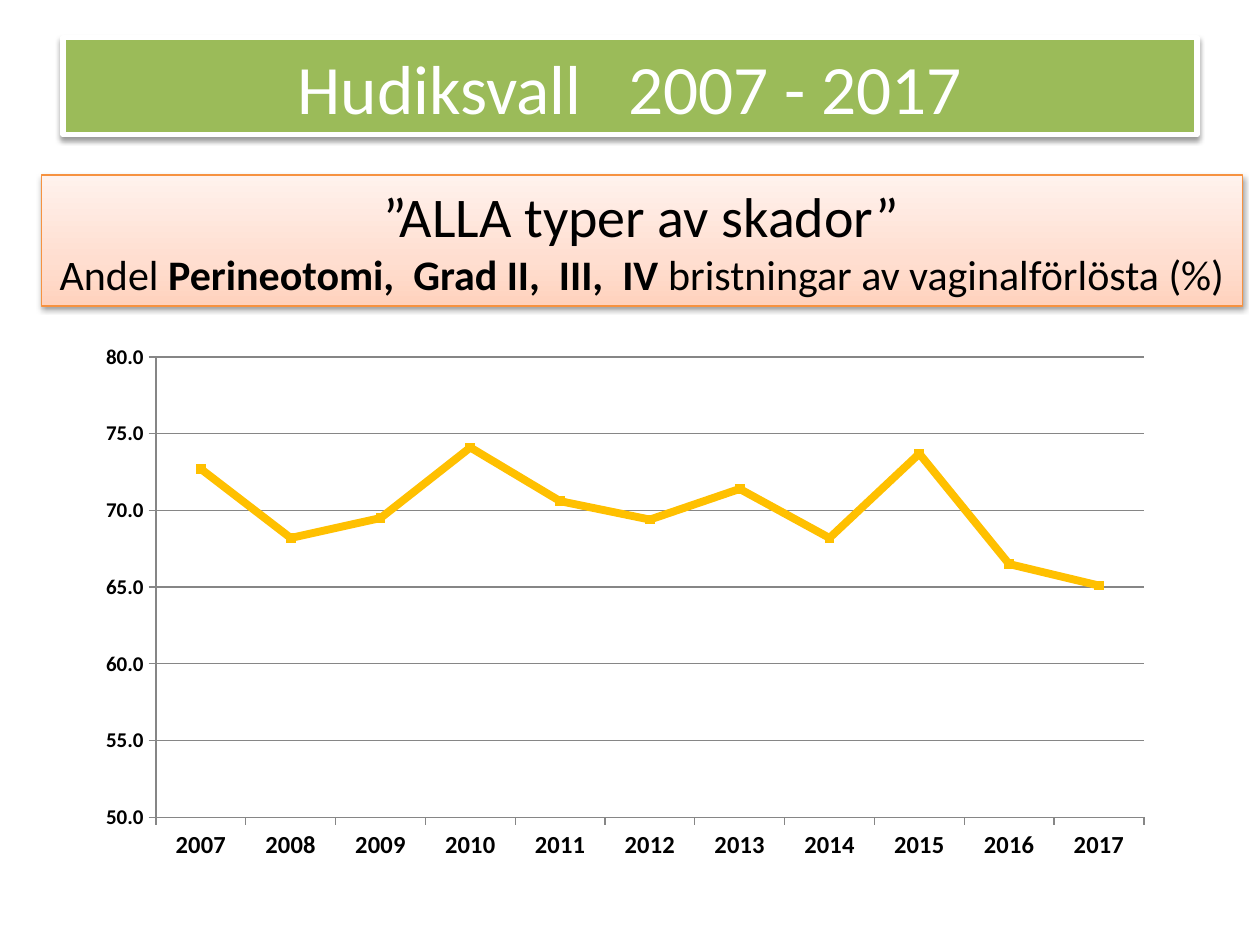
"""Build the slide on birth injuries in Hudiksvall, 2007 to 2017."""
from dataclasses import dataclass

from lxml import etree
from pptx import Presentation
from pptx import util as u
from pptx.chart.data import CategoryChartData
from pptx.dml.color import RGBColor
from pptx.enum import chart as ch, shapes, text
from pptx.oxml.ns import qn

WIDE, HIGH = u.Inches(10), u.Inches(7.5)
FACE = "Calibri"
HUES = {"green": "9BBB59", "white": "FFFFFF", "black": "000000",
        "edge": "F69240", "gold": "FFC000", "gray": "868686"}
BLEND = {0: "FFD2BD", 35: "FFDED0", 100: "FFF2ED"}
YEARS = range(2007, 2018)
RATES = (72.7, 68.2, 69.5, 74.1, 70.6, 69.4, 71.4, 68.2, 73.7, 66.5, 65.1)
LINES = [
    (32, [("”ALLA typer av skador”", False)]),
    (24, [("Andel ", False), ("Perineotomi,  Grad II,  III,  IV ", True),
          ("bristningar av vaginalförlösta (%)", False)]),
]


@dataclass
class Box:
    """Hold a frame as shares of the slide's size."""
    left: float
    top: float
    width: float
    height: float

    def frame(self) -> tuple:
        """Return the frame as lengths."""
        return (int(self.left * WIDE), int(self.top * HIGH),
                int(self.width * WIDE), int(self.height * HIGH))


TITLE = Box(0.05, 0.04, 0.9, 0.1027)
NOTE = Box(0.033, 0.1853, 0.953, 0.1387)
GRAPH = Box(0.067, 0.3533, 0.858, 0.568)


def tint(name: str) -> RGBColor:
    """Return a named colour."""
    return RGBColor.from_string(HUES[name])


def style(font, size: float, hue: str, bold=None) -> None:
    """Set face, size, colour and weight of a font."""
    font.name, font.size, font.bold = FACE, u.Pt(size), bold
    font.color.rgb = tint(hue)


def edge(line, hue: str, width: float) -> None:
    """Set colour and width of a line."""
    line.color.rgb = tint(hue)
    line.width = u.Pt(width)


def shade(shape) -> None:
    """Give a shape a soft shadow straight below it."""
    shape.shadow.inherit = False
    list_ = shape.element.spPr.find(qn("a:effectLst"))
    drop = etree.SubElement(list_, qn("a:outerShdw"), blurRad=str(u.Pt(3.1)),
                            dist=str(u.Pt(1.6)), dir="5400000", rotWithShape="0")
    tone = etree.SubElement(drop, qn("a:srgbClr"), val=HUES["black"])
    etree.SubElement(tone, qn("a:alpha"), val="38000")


def blend(shape) -> None:
    """Fill a shape with the peach blend, rising from the bottom."""
    shape.fill.gradient()
    shape.fill.gradient_angle = 90
    stops = shape.element.spPr.find(qn("a:gradFill")).find(qn("a:gsLst"))
    for stop in list(stops):
        stops.remove(stop)
    for share, hue in BLEND.items():
        stop = etree.SubElement(stops, qn("a:gs"), pos=str(share * 1000))
        etree.SubElement(stop, qn("a:srgbClr"), val=hue)


def draw_title(slide) -> None:
    """Format the title as a green banner."""
    title = slide.shapes.title
    title.left, title.top, title.width, title.height = TITLE.frame()
    title.fill.solid()
    title.fill.fore_color.rgb = tint("green")
    edge(title.line, "white", 3)
    shade(title)
    title.text_frame.text = "Hudiksvall   2007 - 2017"
    title.text_frame.vertical_anchor = text.MSO_ANCHOR.MIDDLE
    para = title.text_frame.paragraphs[0]
    para.alignment = text.PP_ALIGN.CENTER
    style(para.font, 39.6, "white")


def draw_note(slide) -> None:
    """Draw the peach box that names the measure."""
    note = slide.shapes.add_shape(shapes.MSO_SHAPE.RECTANGLE, *NOTE.frame())
    blend(note)
    edge(note.line, "edge", 0.75)
    shade(note)
    body = note.text_frame
    body.word_wrap = False
    body.auto_size = text.MSO_AUTO_SIZE.SHAPE_TO_FIT_TEXT
    body.vertical_anchor = text.MSO_ANCHOR.TOP
    for row, (size, runs) in enumerate(LINES):
        para = body.add_paragraph() if row else body.paragraphs[0]
        para.alignment = text.PP_ALIGN.CENTER
        style(para.font, size, "black")
        for words, bold in runs:
            run = para.add_run()
            run.text, run.font.bold = words, bold


def draw_axis(axis, size: float) -> None:
    """Format an axis with outer ticks and bold labels."""
    axis.major_tick_mark = ch.XL_TICK_MARK.OUTSIDE
    axis.minor_tick_mark = ch.XL_TICK_MARK.NONE
    edge(axis.format.line, "gray", 0.75)
    style(axis.tick_labels.font, size, "black", True)


def draw_chart(slide) -> None:
    """Draw the yearly rates as a line chart."""
    data = CategoryChartData(number_format="0.0")
    data.categories = [str(year) for year in YEARS]
    data.add_series("Series 1", RATES)
    chart = slide.shapes.add_chart(ch.XL_CHART_TYPE.LINE_MARKERS,
                                   *GRAPH.frame(), data).chart
    style(chart.font, 10, "black")
    chart.has_legend = chart.has_title = False
    chart.plots[0].vary_by_categories = False
    draw_axis(chart.category_axis, 14)
    axis = chart.value_axis
    draw_axis(axis, 12)
    axis.minimum_scale, axis.maximum_scale, axis.major_unit = 50, 80, 5
    axis.tick_labels.number_format = "0.0"
    axis.tick_labels.number_format_is_linked = False
    axis.has_major_gridlines = True
    edge(axis.major_gridlines.format.line, "gray", 0.75)
    rate = chart.plots[0].series[0]
    rate.smooth = False
    edge(rate.format.line, "gold", 4.5)
    mark = rate.marker
    mark.style, mark.size = ch.XL_MARKER_STYLE.SQUARE, 5
    mark.format.fill.solid()
    mark.format.fill.fore_color.rgb = tint("gold")
    edge(mark.format.line, "gold", 0.75)


def main() -> None:
    """Build and save the slide."""
    deck = Presentation()
    deck.slide_width, deck.slide_height = WIDE, HIGH
    slide = deck.slides.add_slide(deck.slide_layouts[5])
    draw_title(slide)
    draw_note(slide)
    draw_chart(slide)
    deck.save("out.pptx")


if __name__ == "__main__":
    main()
